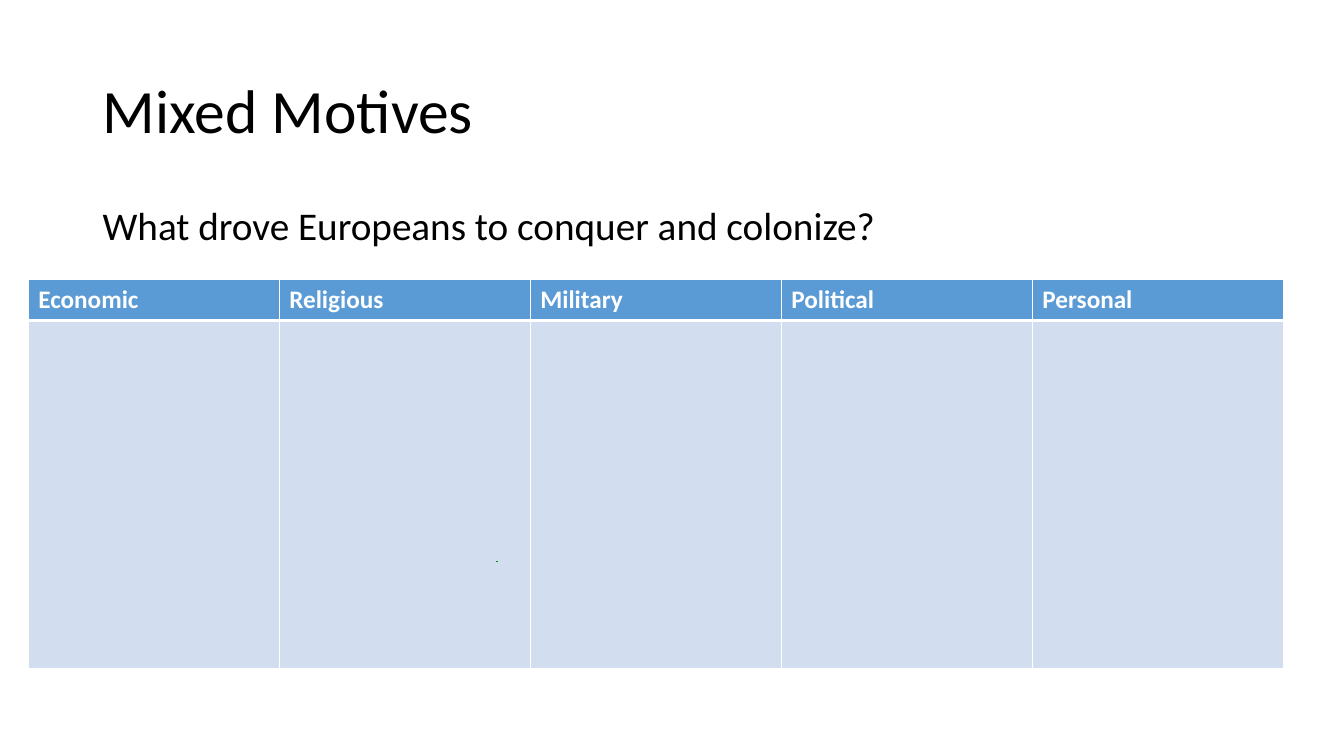
from dataclasses import dataclass

from lxml import etree
from pptx import Presentation
from pptx.dml.color import RGBColor
from pptx.enum.text import MSO_ANCHOR, MSO_AUTO_SIZE, PP_ALIGN
from pptx.oxml.ns import qn
from pptx.slide import Slide
from pptx.table import _Cell
from pptx.text.text import TextFrame
from pptx.util import Inches, Pt

LEFT = PP_ALIGN.LEFT
TOP = MSO_ANCHOR.TOP
MIDDLE = MSO_ANCHOR.MIDDLE
NO_AUTOFIT = MSO_AUTO_SIZE.NONE
TITLE_ONLY = 5


@dataclass(frozen=True)
class Theme:
    font: str = "Calibri"
    text: str = "000000"
    white: str = "FFFFFF"
    header: str = "5B9BD5"
    body: str = "D2DEEF"
    ink: str = "009300"
    title_size: int = 44
    question_size: int = 28
    header_size: int = 18
    thin: int = 1
    thick: int = 3
    ink_width: float = 1.5


@dataclass(frozen=True)
class TableRow:
    labels: tuple[str, ...]
    height: float
    fill: str
    top: int
    bottom: int


THEME = Theme()
MOTIVES = ("Economic", "Religious", "Military", "Political", "Personal")
COLUMN_WIDTH = 2.49
ROWS = (
    TableRow(MOTIVES, 0.41, THEME.header, THEME.thin, THEME.thick),
    TableRow(("",) * len(MOTIVES), 3.45, THEME.body, THEME.thick, THEME.thin),
)


def write(frame: TextFrame, text: str, *, size: int, color: str = THEME.text,
          bold: bool = False, spacing: float = 1.0) -> None:
    para = frame.paragraphs[0]
    para.alignment = LEFT
    para.line_spacing = spacing
    span = para.add_run()
    span.text = text
    span.font.name = THEME.font
    span.font.size = Pt(size)
    span.font.bold = bold
    span.font.color.rgb = RGBColor.from_string(color)


def set_up_frame(frame: TextFrame, anchor: MSO_ANCHOR) -> None:
    frame.word_wrap = True
    frame.auto_size = NO_AUTOFIT
    frame.vertical_anchor = anchor


def set_borders(cell: _Cell, top: int, bottom: int) -> None:
    properties = cell._tc.get_or_add_tcPr()
    widths = {"a:lnL": THEME.thin, "a:lnR": THEME.thin, "a:lnT": top, "a:lnB": bottom}
    for tag, width in widths.items():
        line = etree.SubElement(properties, qn(tag), w=str(Pt(width)))
        fill = etree.SubElement(line, qn("a:solidFill"))
        etree.SubElement(fill, qn("a:srgbClr"), val=THEME.white)


def add_title(page: Slide) -> None:
    title = page.shapes.title
    title.left, title.top = Inches(0.92), Inches(0.4)
    title.width, title.height = Inches(11.5), Inches(1.45)
    set_up_frame(title.text_frame, MIDDLE)
    write(title.text_frame, "Mixed Motives", size=THEME.title_size, spacing=0.9)


def add_question(page: Slide) -> None:
    box = page.shapes.add_textbox(Inches(0.92), Inches(2), Inches(11.5), Inches(0.7))
    set_up_frame(box.text_frame, TOP)
    write(box.text_frame, "What drove Europeans to conquer and colonize?",
          size=THEME.question_size, spacing=0.9)


def add_motives_table(page: Slide) -> None:
    table = page.shapes.add_table(
        len(ROWS), len(MOTIVES), Inches(0.28), Inches(2.77),
        Inches(COLUMN_WIDTH * len(MOTIVES)), Inches(sum(row.height for row in ROWS)),
    ).table
    for column in table.columns:
        column.width = Inches(COLUMN_WIDTH)
    for row, table_row in zip(ROWS, table.rows):
        table_row.height = Inches(row.height)
        for label, cell in zip(row.labels, table_row.cells):
            set_borders(cell, row.top, row.bottom)
            cell.fill.solid()
            cell.fill.fore_color.rgb = RGBColor.from_string(row.fill)
            if label:
                write(cell.text_frame, label, size=THEME.header_size,
                      color=THEME.white, bold=True)


def add_ink_mark(page: Slide) -> None:
    builder = page.shapes.build_freeform(Inches(4.93), Inches(5.58))
    builder.add_line_segments([(Inches(4.93), Inches(5.57))], close=False)
    mark = builder.convert_to_shape()
    mark.shadow.inherit = False
    mark.fill.background()
    mark.line.color.rgb = RGBColor.from_string(THEME.ink)
    mark.line.width = Pt(THEME.ink_width)


def main() -> None:
    deck = Presentation()
    deck.slide_width, deck.slide_height = Inches(13.33), Inches(7.5)
    page = deck.slides.add_slide(deck.slide_layouts[TITLE_ONLY])
    add_title(page)
    add_question(page)
    add_motives_table(page)
    add_ink_mark(page)
    deck.save("out.pptx")


if __name__ == "__main__":
    main()
